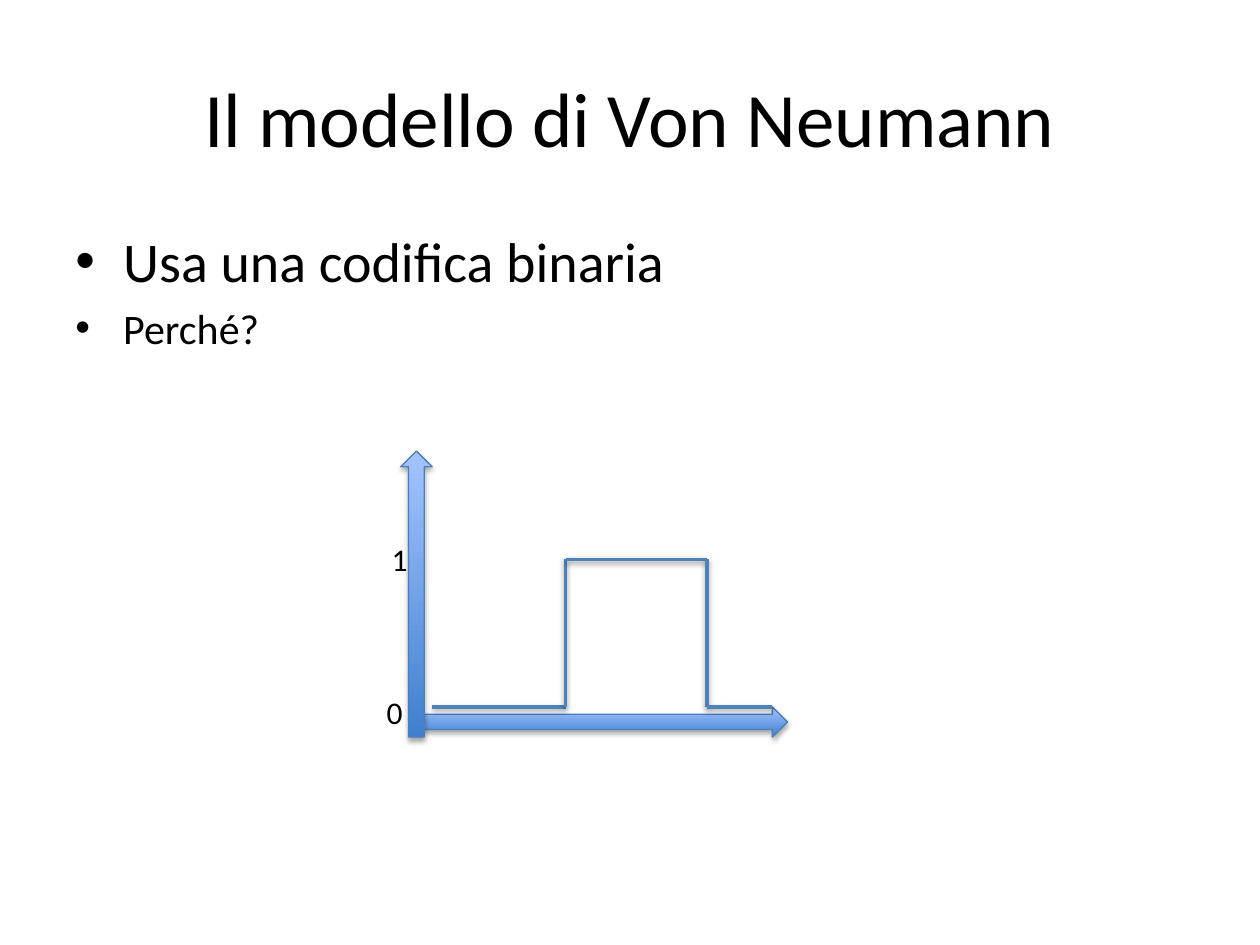
from itertools import pairwise

from lxml.etree import SubElement
from pptx import Presentation
from pptx.dml.color import RGBColor
from pptx.enum.shapes import MSO_CONNECTOR, MSO_SHAPE
from pptx.enum.text import MSO_ANCHOR, MSO_AUTO_SIZE, PP_ALIGN
from pptx.oxml.ns import qn
from pptx.util import Inches, Pt

COLUMNS, ROWS = 40, 30


def color(hex_string):
    return RGBColor.from_string(hex_string)


class SlideBuilder:
    """Draws on one slide; all places are columns and rows of its grid."""

    font = "Calibri"
    ink = "000000"
    axis_stops = ("3F80CE", "A4C4FF")
    axis_edge = "4B7EBC"
    signal_color = "4F81BD"

    def __init__(self, presentation):
        self.slide = presentation.slides.add_slide(presentation.slide_layouts[6])
        self.cell_width = presentation.slide_width / COLUMNS
        self.cell_height = presentation.slide_height / ROWS

    def place(self, *lengths):
        """Turn alternating columns and rows into slide lengths."""
        cells = (self.cell_width, self.cell_height)
        return [round(n * cells[i % 2]) for i, n in enumerate(lengths)]

    def style(self, paragraph, text, size):
        paragraph.text = text
        paragraph.font.name = self.font
        paragraph.font.size = Pt(size)
        paragraph.font.color.rgb = color(self.ink)

    def add_shadow(self, shape, blur, distance, opacity):
        """Add a soft shadow below; call after the line has been set."""
        effects = SubElement(shape._element.spPr, qn("a:effectLst"))
        shadow = SubElement(effects, qn("a:outerShdw"), blurRad=str(Pt(blur)),
                            dist=str(Pt(distance)), dir="5400000", rotWithShape="0")
        tint = SubElement(shadow, qn("a:srgbClr"), val="000000")
        SubElement(tint, qn("a:alpha"), val=str(opacity * 1000))

    def title(self, text, *box):
        frame = self.slide.shapes.add_textbox(*self.place(*box)).text_frame
        frame.word_wrap = True
        frame.vertical_anchor = MSO_ANCHOR.MIDDLE
        self.style(frame.paragraphs[0], text, 44)
        frame.paragraphs[0].alignment = PP_ALIGN.CENTER

    def bullets(self, items, *box):
        frame = self.slide.shapes.add_textbox(*self.place(*box)).text_frame
        frame.word_wrap = True
        for i, (text, size) in enumerate(items):
            paragraph = frame.add_paragraph() if i else frame.paragraphs[0]
            self.style(paragraph, text, size)
            paragraph.space_before = Pt(size * 0.2)
            properties = paragraph._p.get_or_add_pPr()
            properties.set("marL", str(Inches(0.38)))
            properties.set("indent", str(Inches(-0.38)))
            bullet_font = properties.makeelement(qn("a:buFont"), {"typeface": "Arial"})
            bullet = properties.makeelement(qn("a:buChar"), {"char": "•"})
            properties.find(qn("a:spcBef")).addnext(bullet_font)
            bullet_font.addnext(bullet)

    def axis(self, kind, *box):
        arrow = self.slide.shapes.add_shape(kind, *self.place(*box))
        arrow.fill.gradient()
        arrow.fill.gradient_angle = 90
        for stop, hex_string in zip(arrow.fill.gradient_stops, self.axis_stops):
            stop.color.rgb = color(hex_string)
        arrow.line.color.rgb = color(self.axis_edge)
        arrow.line.width = Pt(0.75)
        self.add_shadow(arrow, 3.1, 1.8, 35)

    def signal(self, points):
        for start, end in pairwise(points):
            line = self.slide.shapes.add_connector(
                MSO_CONNECTOR.STRAIGHT, *self.place(*start, *end))
            line.line.color.rgb = color(self.signal_color)
            line.line.width = Pt(2)
            self.add_shadow(line, 3.1, 1.6, 38)

    def level_label(self, text, *box):
        frame = self.slide.shapes.add_textbox(*self.place(*box)).text_frame
        frame.word_wrap = False
        frame.auto_size = MSO_AUTO_SIZE.SHAPE_TO_FIT_TEXT
        self.style(frame.paragraphs[0], text, 18)


def main():
    presentation = Presentation()
    presentation.slide_width = Inches(10)
    presentation.slide_height = Inches(7.5)
    builder = SlideBuilder(presentation)

    builder.title("Il modello di Von Neumann", 2, 1.2, 36, 5)
    builder.bullets([("Usa una codifica binaria", 32), ("Perché?", 24)], 2, 7, 36, 19.8)

    builder.axis(MSO_SHAPE.RIGHT_ARROW, 13.2, 22.44, 11.8, 0.96)
    builder.axis(MSO_SHAPE.UP_ARROW, 12.72, 14.32, 1, 9.08)

    low, high = 22.44, 17.76
    start, rise, fall, end = 13.72, 17.96, 22.44, 24.52
    builder.signal([(start, low), (rise, low), (rise, high),
                    (fall, high), (fall, low), (end, low)])

    builder.level_label("0", 11.88, 21.8, 1.32, 1.6)
    builder.level_label("1", 12.04, 16.96, 1.32, 1.6)

    presentation.save("out.pptx")


if __name__ == "__main__":
    main()
